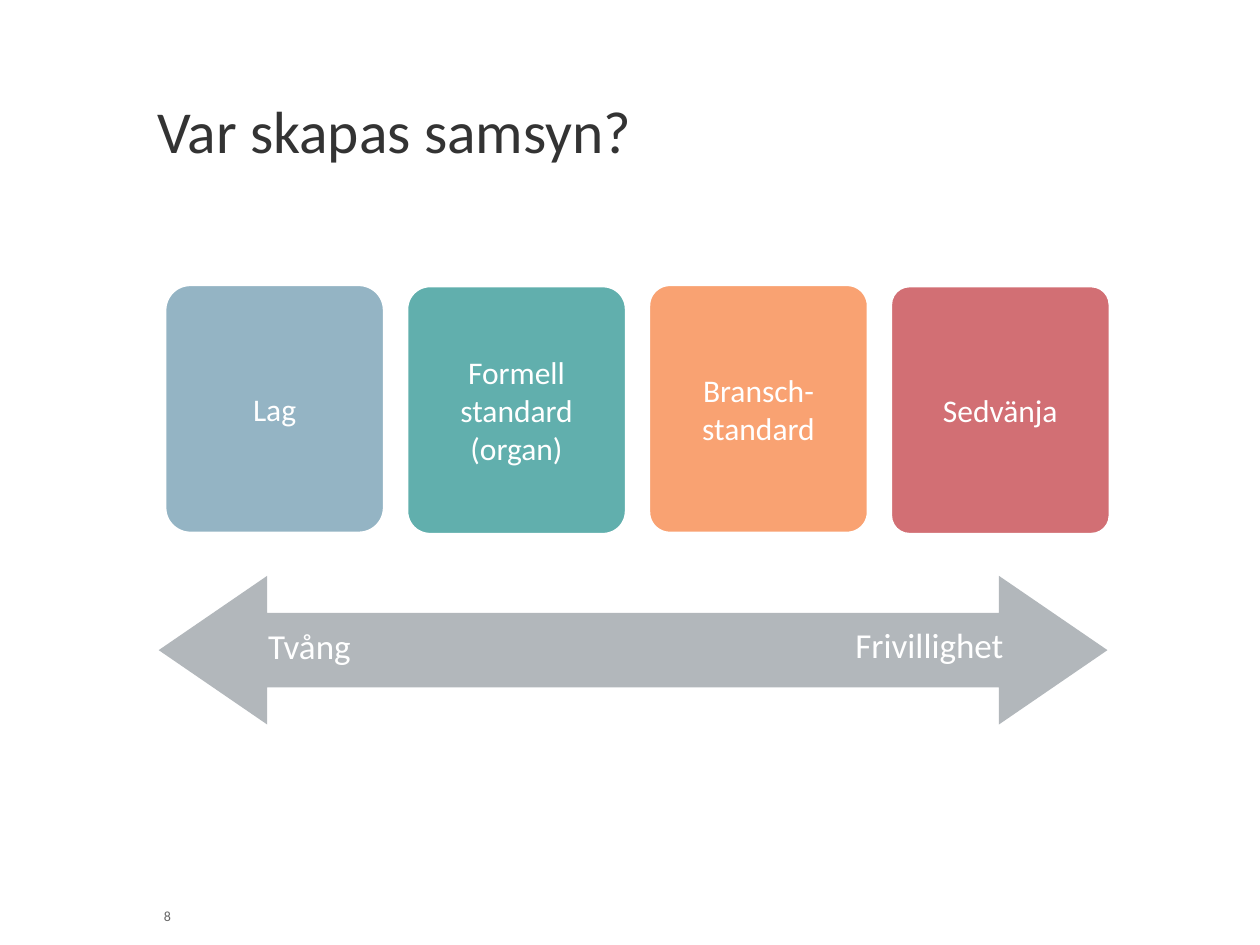
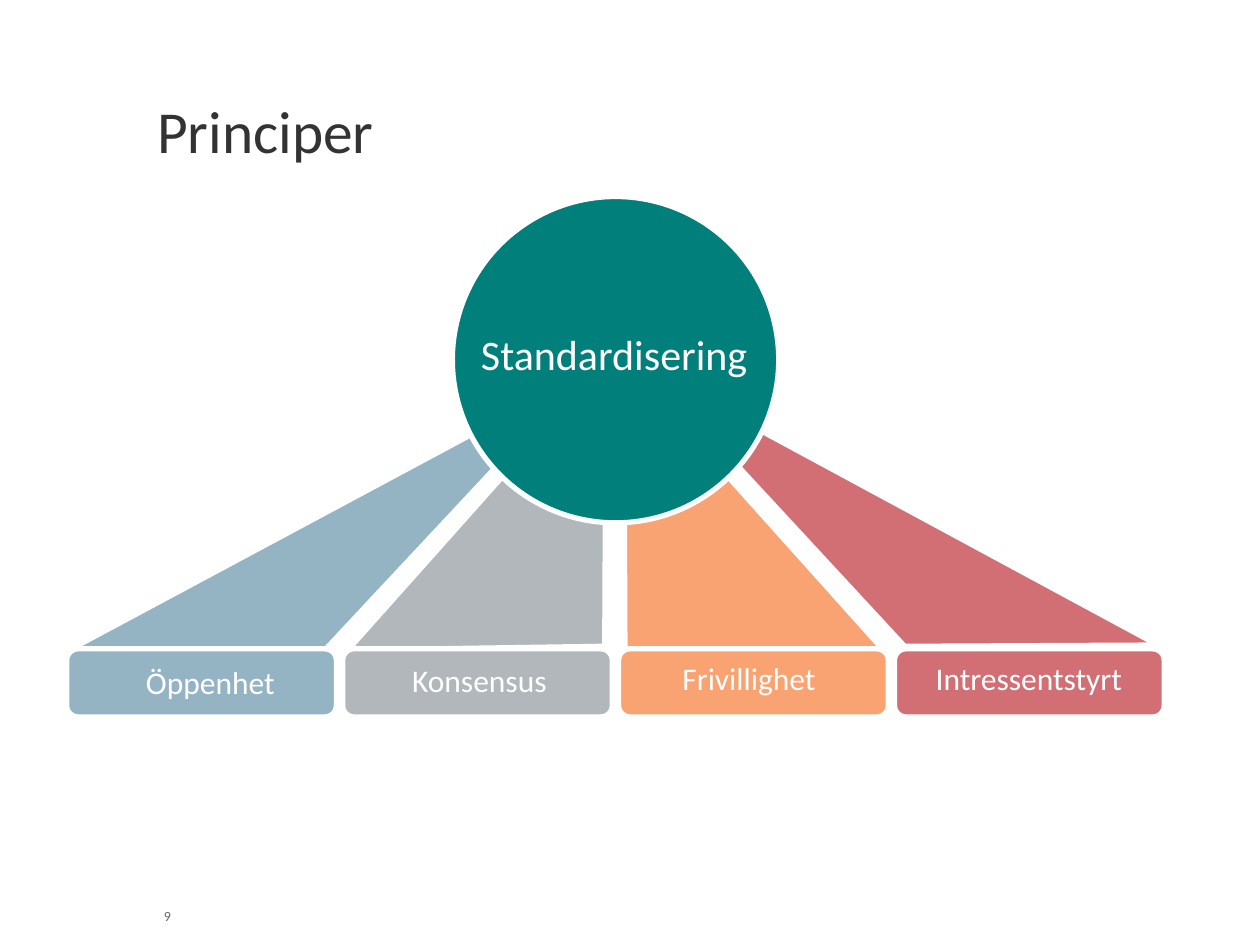
from pptx import Presentation
from pptx.dml.color import RGBColor
from pptx.enum.shapes import MSO_SHAPE
from pptx.enum.text import MSO_ANCHOR, PP_ALIGN
from pptx.util import Emu, Pt

PX = 9144
FONT = "Calibri"
WHITE = "FFFFFF"
TITLE_INK = "333333"
NUMBER_INK = "666666"
BLUE = "94B4C4"
TEAL = "61AFAD"
ORANGE = "F9A272"
RED = "D26F74"
GREY = "B2B7BB"
DARK_TEAL = "007F7B"


def px(n):
    return Emu(n * PX)


def color(value):
    return RGBColor.from_string(value)


def paint(sp, fill, outlined=True):
    sp.shadow.inherit = False
    sp.fill.solid()
    sp.fill.fore_color.rgb = color(fill)
    if outlined:
        sp.line.color.rgb = color(WHITE)
        sp.line.width = Pt(3)
    else:
        sp.line.fill.background()


def write(tf, lines, size, ink=WHITE, align=PP_ALIGN.LEFT):
    for i, line in enumerate(lines):
        p = tf.paragraphs[0] if i == 0 else tf.add_paragraph()
        p.alignment = align
        r = p.add_run()
        r.text = line
        r.font.name = FONT
        r.font.size = Pt(size)
        r.font.color.rgb = color(ink)


def add_box(shapes, kind, box, fill, outlined=True, adjustments=()):
    sp = shapes.add_shape(kind, *map(px, box))
    for i, value in enumerate(adjustments):
        sp.adjustments[i] = value
    paint(sp, fill, outlined)
    return sp


def add_text(shapes, box, text, size, ink=WHITE, align=PP_ALIGN.LEFT, wrap=True):
    sp = shapes.add_textbox(*map(px, box))
    tf = sp.text_frame
    tf.word_wrap = wrap
    write(tf, [text], size, ink, align)
    return tf


def set_insets(tf, left):
    tf.margin_left = px(left)
    tf.margin_top = tf.margin_right = tf.margin_bottom = 0


def add_ray(shapes, points, fill):
    builder = shapes.build_freeform(*points[0], scale=PX)
    builder.add_line_segments(points[1:], close=True)
    paint(builder.convert_to_shape(), fill)


def add_slide(prs, title, number):
    s = prs.slides.add_slide(prs.slide_layouts[6])
    tf = add_text(s.shapes, (115, 81, 770, 105), title, 34, TITLE_INK)
    set_insets(tf, 10)
    tf.paragraphs[0].line_spacing = 0.9
    tf = add_text(s.shapes, (130, 721, 24, 12), str(number), 8, NUMBER_INK)
    set_insets(tf, 0)
    tf.vertical_anchor = MSO_ANCHOR.MIDDLE
    return s


def add_card(shapes, index, lines, fill):
    box = (130 + 192 * index, 225 + index % 2, 176, 199)
    sp = add_box(shapes, MSO_SHAPE.ROUNDED_RECTANGLE, box, fill,
                 adjustments=[0.12 - 0.01 * index])
    tf = sp.text_frame
    tf.word_wrap = True
    tf.vertical_anchor = MSO_ANCHOR.MIDDLE
    write(tf, lines, 18, align=PP_ALIGN.CENTER)


def add_principle(shapes, index, label, label_box, fill, ray):
    group = shapes.add_group_shape().shapes
    add_ray(group, ray, fill)
    add_box(group, MSO_SHAPE.ROUNDED_RECTANGLE,
            (53 + 219 * index, 515, 214, 54), fill)
    add_text(group, label_box, label, 18, align=PP_ALIGN.CENTER, wrap=False)


def consensus_slide(prs):
    s = add_slide(prs, "Var skapas samsyn?", 8)
    cards = [
        (["Lag"], BLUE),
        (["Formell standard", "(organ)"], TEAL),
        (["Bransch- standard"], ORANGE),
        (["Sedvänja"], RED),
    ]
    for i, (lines, fill) in enumerate(cards):
        add_card(s.shapes, i, lines, fill)
    add_box(s.shapes, MSO_SHAPE.LEFT_RIGHT_ARROW, (126, 457, 753, 118), GREY,
            outlined=False, adjustments=[0.5, 0.73])
    add_text(s.shapes, (203, 491, 152, 64), "Tvång", 20)
    add_text(s.shapes, (669, 490, 174, 104), "Frivillighet", 20)


def principles_slide(prs):
    s = add_slide(prs, "Principer", 9)
    principles = [
        ("Öppenhet", (105, 521, 124, 41), BLUE,
         [(256, 518), (457, 303), (456, 301), (53, 517)]),
        ("Konsensus", (316, 520, 129, 41), GREY,
         [(480, 513), (276, 516), (481, 286)]),
        ("Frivillighet", (531, 518, 127, 41), ORANGE,
         [(496, 515), (703, 518), (495, 286)]),
        ("Intressentstyrt", (732, 518, 169, 41), RED,
         [(718, 513), (518, 297), (519, 296), (919, 512)]),
    ]
    for i, (label, label_box, fill, ray) in enumerate(principles):
        add_principle(s.shapes, i, label, label_box, fill, ray)
    add_box(s.shapes, MSO_SHAPE.OVAL, (359, 156, 259, 259), DARK_TEAL)
    add_text(s.shapes, (371, 256, 233, 51), "Standardisering", 24,
             align=PP_ALIGN.CENTER, wrap=False)


def main():
    prs = Presentation()
    prs.slide_width = px(1000)
    prs.slide_height = px(750)
    consensus_slide(prs)
    principles_slide(prs)
    prs.save("out.pptx")


if __name__ == "__main__":
    main()
